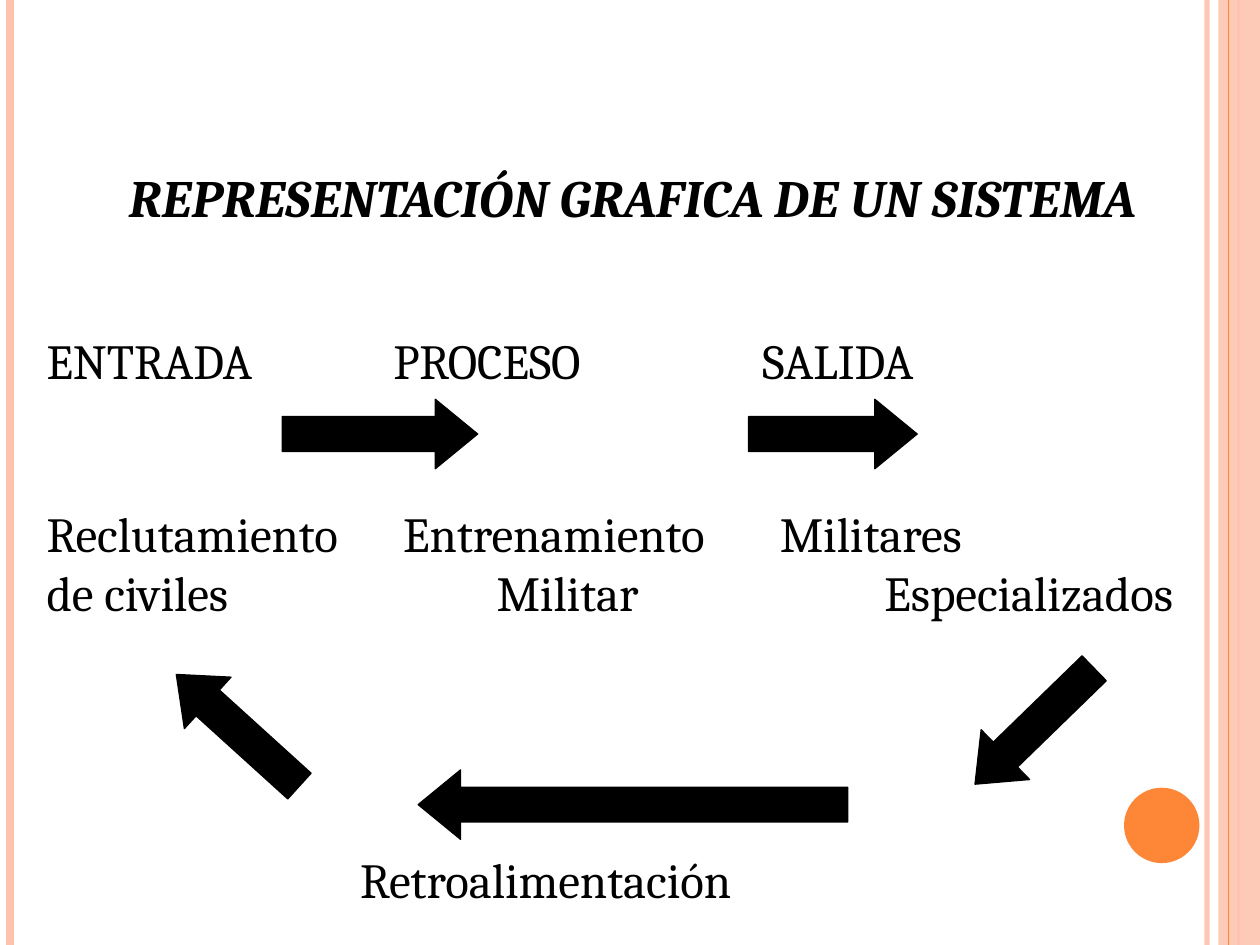
import pptx
import pptx.util
import pptx.dml.color
import pptx.enum.shapes
import pptx.enum.text
import pptx.oxml.ns
from lxml import etree

Cm, Pt = pptx.util.Cm, pptx.util.Pt
qn = pptx.oxml.ns.qn
COLORS = {"text": "000000", "peach": "FEC3AE", "orange": "FE8637"}
FONT = "Cambria"
WIDTH, HEIGHT = 25.4, 19.05


def rgb(name):
    return pptx.dml.color.RGBColor.from_string(COLORS[name])


def write(p, text, size=28, bold=False, italic=False, color="text"):
    r = p.add_run()
    r.text = text
    r.font.name, r.font.size = FONT, Pt(size)
    r.font.bold, r.font.italic = bold, italic
    r.font.color.rgb = rgb(color)


def set_alpha(sp, percent):
    clr = sp._element.spPr.find(".//" + qn("a:srgbClr"))
    etree.SubElement(clr, qn("a:alpha"), val=str(percent * 1000))


class SlideBuilder:
    def __init__(self, s):
        self.s = s

    def title(self, text, x, y, w, h):
        sp = self.s.shapes.title
        sp.left, sp.top, sp.width, sp.height = Cm(x), Cm(y), Cm(w), Cm(h)
        tf = sp.text_frame
        tf.auto_size = pptx.enum.text.MSO_AUTO_SIZE.NONE
        tf.vertical_anchor = pptx.enum.text.MSO_ANCHOR.BOTTOM
        p = tf.paragraphs[0]
        p.alignment = pptx.enum.text.PP_ALIGN.CENTER
        write(p, text, size=30, bold=True, italic=True)

    def shape(self, kind, x, y, w, h, color, alpha=100):
        sp = self.s.shapes.add_shape(kind, Cm(x), Cm(y), Cm(w), Cm(h))
        sp.shadow.inherit = False
        sp.fill.solid()
        sp.fill.fore_color.rgb = rgb(color)
        sp.line.fill.background()
        if alpha < 100:
            set_alpha(sp, alpha)
        return sp

    def stripe(self, x, color, width, alpha=100):
        straight = pptx.enum.shapes.MSO_CONNECTOR.STRAIGHT
        sp = self.s.shapes.add_connector(straight, Cm(x), 0, Cm(x), Cm(HEIGHT))
        sp.line.color.rgb, sp.line.width = rgb(color), Pt(width)
        etree.SubElement(sp._element.spPr, qn("a:effectLst"))
        if alpha < 100:
            set_alpha(sp, alpha)

    def arrow(self, x, y, w, rotation=0):
        kind = pptx.enum.shapes.MSO_SHAPE.RIGHT_ARROW
        sp = self.shape(kind, x, y, w, 1.4, "text")
        sp.adjustments[0], sp.adjustments[1] = 0.5, 0.61
        sp.line.color.rgb, sp.line.width = rgb("text"), Pt(0.75)
        sp.rotation = rotation

    def columns(self, x, y, w, h, rows, top):
        """Rows of tabbed text; each row is (text, space before, tab stops)."""
        tf = self.s.shapes.add_textbox(Cm(x), Cm(y), Cm(w), Cm(h)).text_frame
        tf.word_wrap = True
        tf.margin_top = Cm(top)
        for i, (text, before, stops) in enumerate(rows):
            p = tf.add_paragraph() if i else tf.paragraphs[0]
            p.line_spacing, p.space_before = Pt(27.5), Pt(before)
            tabs = etree.SubElement(p._p.get_or_add_pPr(), qn("a:tabLst"))
            for stop in stops:
                etree.SubElement(tabs, qn("a:tab"), pos=str(Cm(stop)), algn="l")
            write(p, text)


def main():
    prs = pptx.Presentation()
    prs.slide_width, prs.slide_height = Cm(WIDTH), Cm(HEIGHT)
    b = SlideBuilder(prs.slides.add_slide(prs.slide_layouts[5]))
    shapes = pptx.enum.shapes.MSO_SHAPE

    # Side stripes and page dot
    b.stripe(24.33, "peach", 3, alpha=93)
    b.stripe(0.2, "peach", 4.5)
    b.stripe(24.97, "peach", 1.5)
    b.shape(shapes.RECTANGLE, 24.56, 0, 0.84, HEIGHT, "peach", alpha=87)
    b.stripe(24.76, "orange", 0.75)
    b.shape(shapes.OVAL, 22.66, 15.88, 1.52, 1.52, "orange")

    # Title and stage labels
    b.title("REPRESENTACIÓN GRAFICA DE UN SISTEMA", 0.89, 1.55, 23.72, 3.18)
    b.columns(0.69, 4.72, 23.72, 14, [
        ("ENTRADA\tPROCESO\tSALIDA", 0, (6.99, 14.43)),
        ("Reclutamiento\tEntrenamiento\tMilitares", 71.5, (7.19, 14.78)),
        ("de civiles\tMilitar\tEspecializados", 6, (9.07, 16.89)),
        ("\tRetroalimentación", 136.5, (6.32,)),
    ], top=2.16)

    # Flow arrows: forward, then the feedback loop
    for x, y, w, rotation in [
        (15.09, 8.05, 3.4, 0),
        (5.69, 8.05, 3.94, 0),
        (8.43, 15.52, 8.66, 180),
        (19.18, 13.94, 3.35, 135.8),
        (3.12, 14.02, 3.35, 222.2),
    ]:
        b.arrow(x, y, w, rotation)

    prs.save("out.pptx")


if __name__ == "__main__":
    main()
